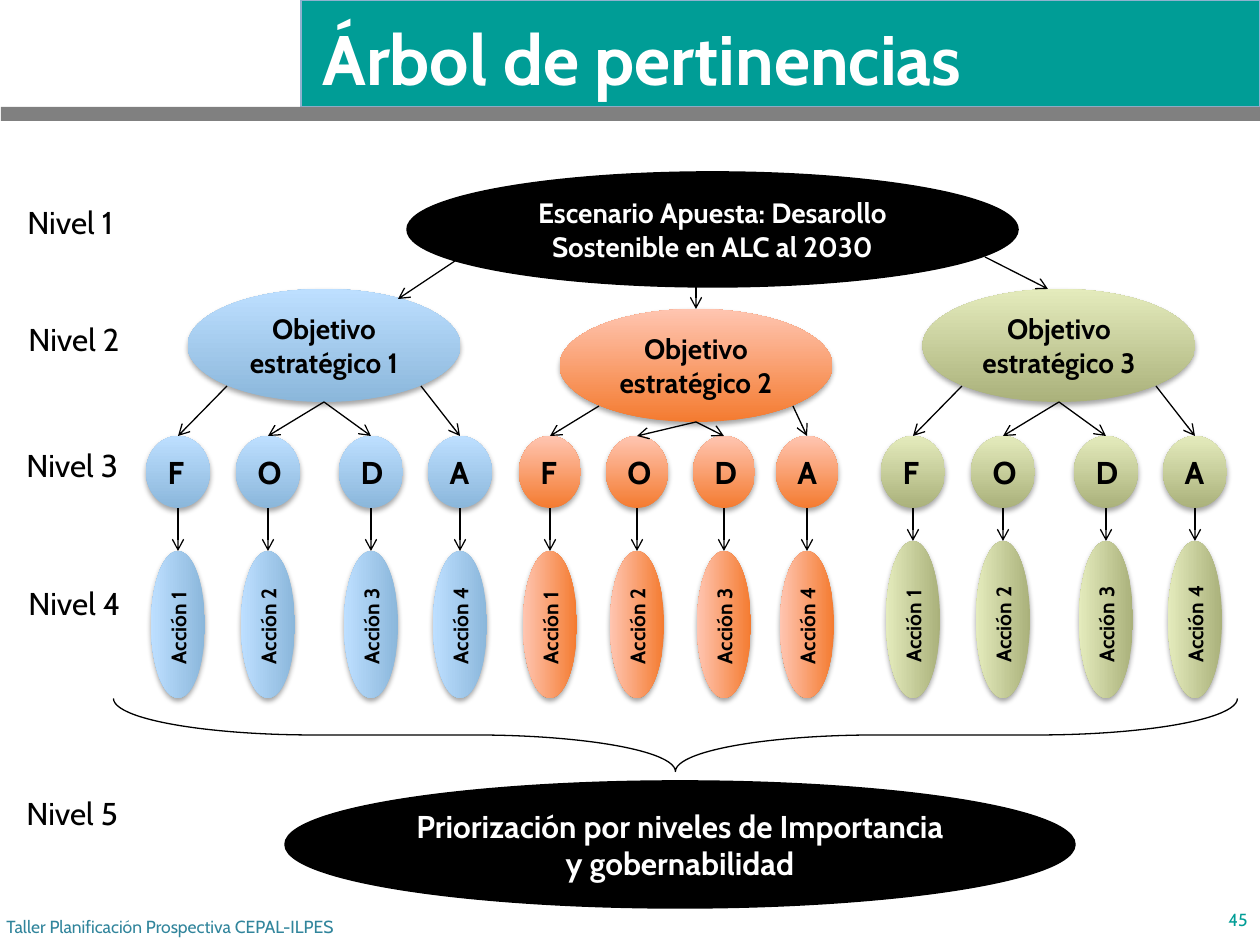
from pptx import Presentation
from pptx.dml.color import RGBColor
from pptx.enum.shapes import MSO_CONNECTOR, MSO_SHAPE
from pptx.enum.text import MSO_ANCHOR, PP_ALIGN
from pptx.oxml.ns import qn
from pptx.util import Emu, Pt
from lxml.etree import SubElement

PIXELS_PER_INCH = 126
FONT = "Cabin"
BLACK = RGBColor(0x00, 0x00, 0x00)
WHITE = RGBColor(0xFF, 0xFF, 0xFF)
TEAL = RGBColor(0x00, 0x9D, 0x96)
GRAY = RGBColor(0x80, 0x80, 0x80)
BANNER_EDGE = RGBColor(0x8F, 0xB2, 0xCF)
FOOTER_BLUE = RGBColor(0x31, 0x85, 0x9C)
BLUE = (RGBColor(0x8B, 0xB7, 0xDB), RGBColor(0xBD, 0xDF, 0xFF))
ORANGE = (RGBColor(0xF4, 0x7B, 0x30), RGBColor(0xFF, 0xC5, 0xB1))
GREEN = (RGBColor(0xAA, 0xB1, 0x7B), RGBColor(0xE4, 0xEB, 0xBC))

OBJECTIVE_WIDTH, OBJECTIVE_HEIGHT = 273, 113
LETTER_TOP, LETTER_HEIGHT = 436, 72
ACTION_WIDTH, ACTION_BOTTOM = 54, 698
BRANCHES = [
    (1, BLUE, 324, 289, 64, 551, (178, 268, 371, 460)),
    (2, ORANGE, 696, 309, 62, 551, (550, 637, 724, 807)),
    (3, GREEN, 1059, 289, 64, 541, (913, 1003, 1106, 1195)),
]
LEVELS = [(15, 197), (16, 314), (14, 440), (16, 578), (14, 788)]


def px(length):
    return Emu(round(length * 914400 / PIXELS_PER_INCH))


def write(shape, text, size, color=BLACK, bold=False, align=PP_ALIGN.LEFT,
          anchor=MSO_ANCHOR.MIDDLE):
    frame = shape.text_frame
    frame.word_wrap = True
    frame.vertical_anchor = anchor
    para = frame.paragraphs[0]
    para.alignment = align
    span = para.add_run()
    span.text = text
    span.font.name = FONT
    span.font.size = Pt(size)
    span.font.bold = bold
    span.font.color.rgb = color


def add_label(slide, left, top, width, height, text, size, **style):
    box = slide.shapes.add_textbox(px(left), px(top), px(width), px(height))
    write(box, text, size, **style)


def add_solid(slide, kind, left, top, width, height, fill, line=None, weight=0.75):
    shape = slide.shapes.add_shape(kind, px(left), px(top), px(width), px(height))
    shape.shadow.inherit = False
    shape.fill.solid()
    shape.fill.fore_color.rgb = fill
    if line is None:
        shape.line.fill.background()
    else:
        shape.line.color.rgb = line
        shape.line.width = Pt(weight)
    return shape


def add_shadow(shape):
    shape.shadow.inherit = False
    effects = shape._element.spPr.find(qn("a:effectLst"))
    shadow = SubElement(effects, qn("a:outerShdw"), blurRad=str(Pt(3.1)),
                        dist=str(Pt(1.8)), dir="5400000", rotWithShape="0")
    color = SubElement(shadow, qn("a:srgbClr"), val="000000")
    SubElement(color, qn("a:alpha"), val="35000")


def add_node(slide, center_x, center_y, width, height, shades, text, size,
             rotation=0, align=PP_ALIGN.LEFT):
    node = slide.shapes.add_shape(
        MSO_SHAPE.OVAL, px(center_x - width / 2), px(center_y - height / 2),
        px(width), px(height))
    node.rotation = rotation
    node.line.fill.background()
    node.fill.gradient()
    node.fill.gradient_angle = 90
    for stop, shade in zip(node.fill.gradient_stops, shades):
        stop.color.rgb = shade
    add_shadow(node)
    write(node, text, size, bold=True, align=align)


def add_arrow(slide, start, end):
    arrow = slide.shapes.add_connector(
        MSO_CONNECTOR.STRAIGHT, *(px(value) for value in (*start, *end)))
    arrow.line.color.rgb = BLACK
    arrow.line.width = Pt(0.75)
    SubElement(arrow.line._get_or_add_ln(), qn("a:tailEnd"), type="arrow")
    SubElement(arrow._element.spPr, qn("a:effectLst"))


def add_header(slide):
    add_solid(slide, MSO_SHAPE.RECTANGLE, 301, 0, 959, 107, TEAL, BANNER_EDGE)
    add_solid(slide, MSO_SHAPE.RECTANGLE, 1, 107, 1259, 14, GRAY)
    add_label(slide, 310, -5, 934, 126, "Árbol de pertinencias", 40,
              color=WHITE, bold=True)


def add_black_oval(slide, left, top, width, height, text, size):
    oval = add_solid(slide, MSO_SHAPE.OVAL, left, top, width, height, BLACK, BLACK, 2)
    write(oval, text, size, color=WHITE, bold=True, align=PP_ALIGN.CENTER)


def add_branch(slide, number, shades, center, top, letter_width, action_top, columns):
    add_node(slide, center, top + OBJECTIVE_HEIGHT / 2, OBJECTIVE_WIDTH,
             OBJECTIVE_HEIGHT, shades, f"Objetivo estratégico {number}", 16,
             align=PP_ALIGN.CENTER)
    bottom = (center, top + OBJECTIVE_HEIGHT)
    starts = [(center - 97, top + 97), bottom, bottom, (center + 97, top + 97)]
    action_length = ACTION_BOTTOM - action_top
    for index, (letter, column, start) in enumerate(zip("FODA", columns, starts), 1):
        add_node(slide, column, LETTER_TOP + LETTER_HEIGHT / 2, letter_width,
                 LETTER_HEIGHT, shades, letter, 18)
        add_node(slide, column, action_top + action_length / 2, action_length,
                 ACTION_WIDTH, shades, f"Acción {index}", 12, rotation=270)
        add_arrow(slide, start, (column, LETTER_TOP))
        add_arrow(slide, (column, LETTER_TOP + LETTER_HEIGHT), (column, action_top))


def add_brace(slide):
    brace = slide.shapes.add_shape(MSO_SHAPE.LEFT_BRACE, px(639), px(173), px(73), px(1124))
    brace.rotation = 270
    brace.adjustments[0] = 2.75
    brace.adjustments[1] = 0.5
    brace.shadow.inherit = False
    brace.fill.background()
    brace.line.color.rgb = BLACK
    brace.line.width = Pt(0.75)


def main():
    deck = Presentation()
    deck.slide_width, deck.slide_height = px(1260), px(945)
    slide = deck.slides.add_slide(deck.slide_layouts[6])
    add_header(slide)
    add_black_oval(slide, 408, 173, 609, 113,
                   "Escenario Apuesta: Desarollo Sostenible en ALC al 2030", 16)
    for branch in BRANCHES:
        add_branch(slide, *branch)
    add_brace(slide)
    add_black_oval(slide, 286, 782, 788, 125,
                   "Priorización por niveles de Importancia y gobernabilidad", 18)
    add_arrow(slide, (985, 257), (1048, 289))
    add_arrow(slide, (461, 257), (398, 299))
    add_arrow(slide, (696, 287), (696, 309))
    for number, (left, top) in enumerate(LEVELS, 1):
        add_label(slide, left, top, 220, 50, f"Nivel {number}", 18,
                  anchor=MSO_ANCHOR.TOP)
    add_label(slide, -6, 902, 753, 50, "Taller Planificación Prospectiva CEPAL-ILPES",
              10, color=FOOTER_BLUE)
    add_label(slide, 1197, 895, 63, 50, "45", 10, color=TEAL, align=PP_ALIGN.RIGHT)
    deck.save("out.pptx")


if __name__ == "__main__":
    main()
